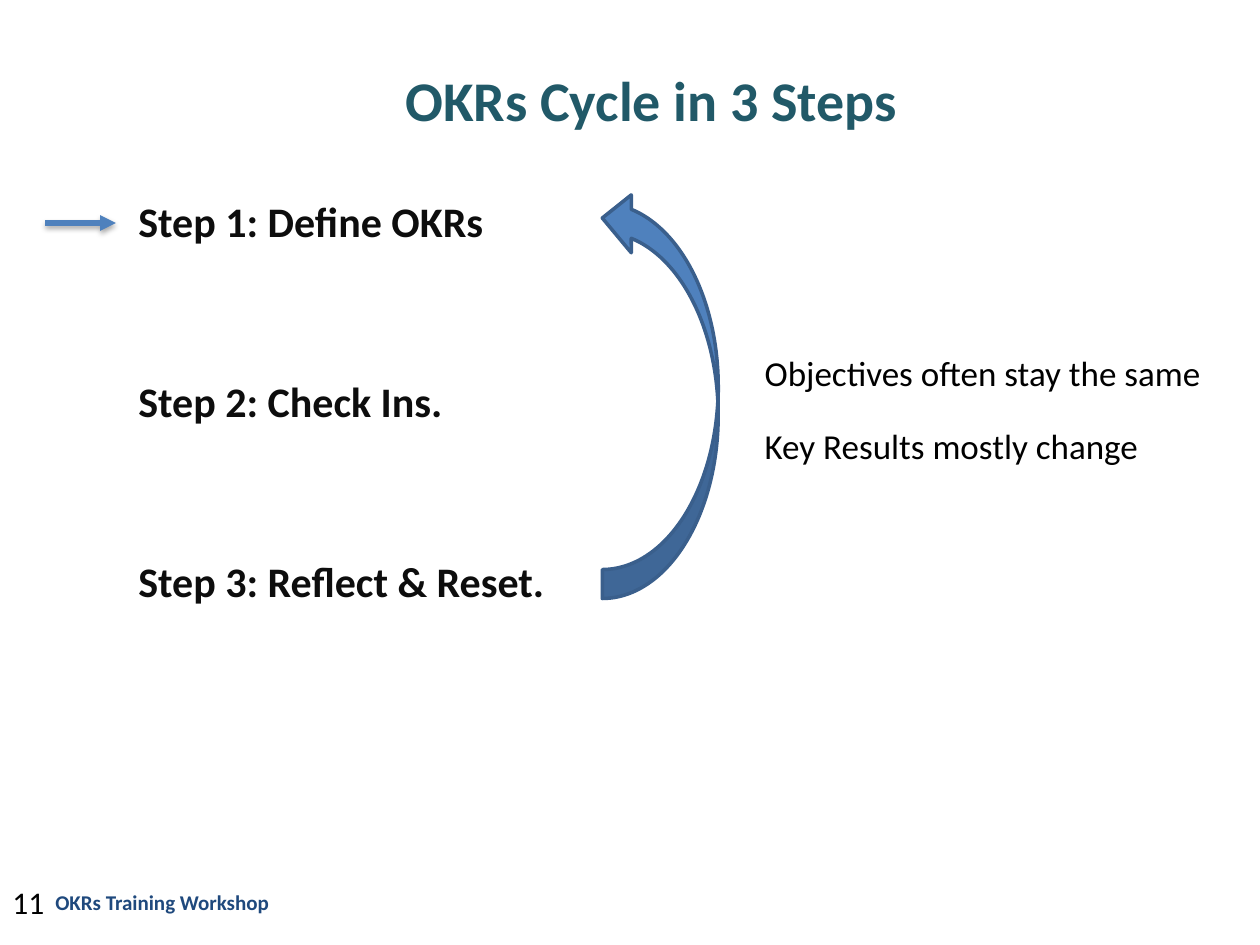
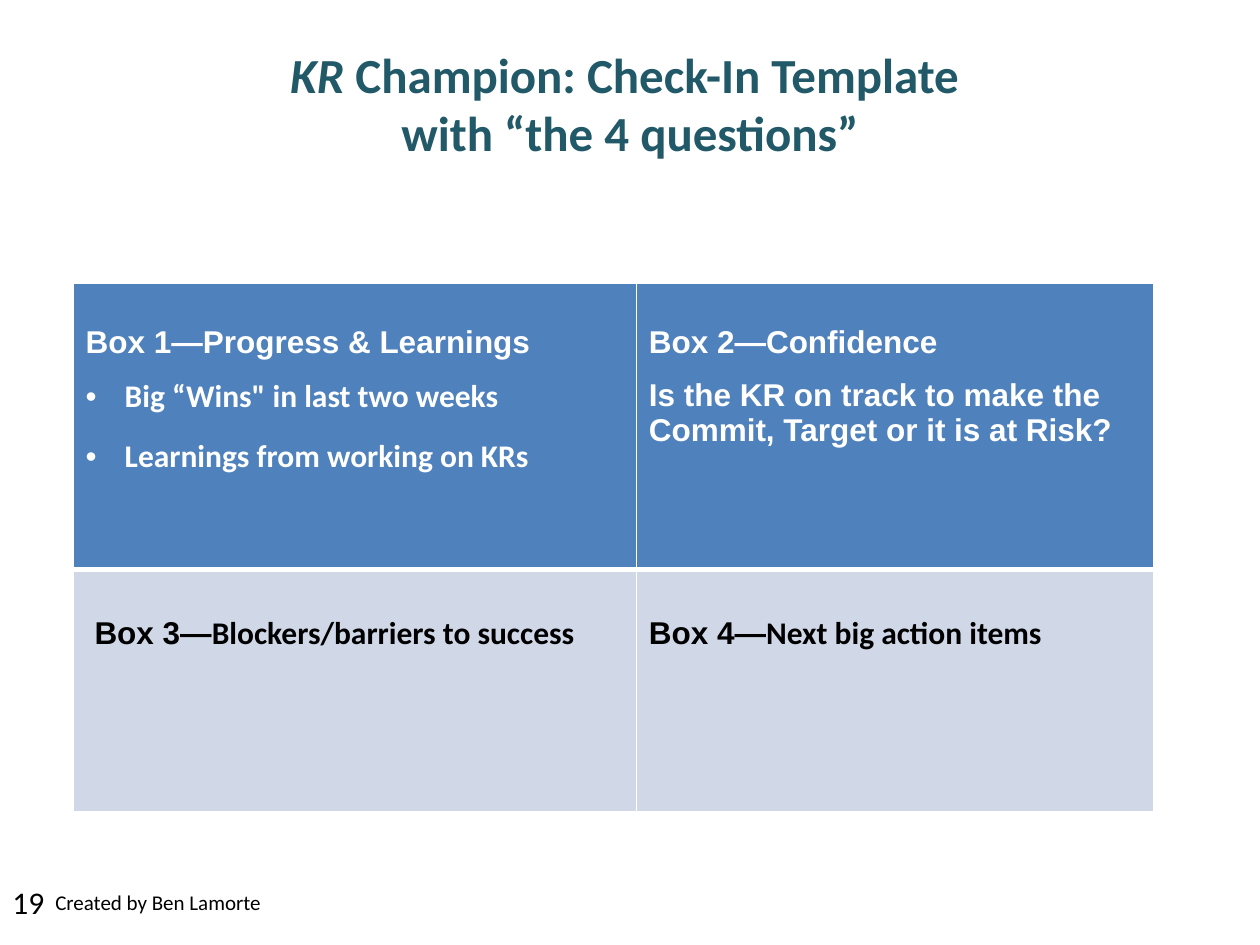
from dataclasses import dataclass

from lxml import etree
from pptx import Presentation
from pptx.dml.color import RGBColor
from pptx.enum.shapes import MSO_CONNECTOR, MSO_SHAPE
from pptx.enum.text import MSO_ANCHOR, PP_ALIGN
from pptx.oxml.ns import qn
from pptx.util import Inches, Pt

STRAIGHT = MSO_CONNECTOR.STRAIGHT
CURVED_ARROW = MSO_SHAPE.CURVED_RIGHT_ARROW
TOP = MSO_ANCHOR.TOP
CENTER = PP_ALIGN.CENTER

TEAL = RGBColor(0x21, 0x59, 0x68)
NAVY = RGBColor(0x1F, 0x49, 0x7D)
BLUE = RGBColor(0x4F, 0x81, 0xBD)
DARK_BLUE = RGBColor(0x3A, 0x5F, 0x8C)
PALE_BLUE = RGBColor(0xD0, 0xD8, 0xE8)
INK = RGBColor(0x0D, 0x0D, 0x0D)
BLACK = RGBColor(0, 0, 0)
WHITE = RGBColor(0xFF, 0xFF, 0xFF)

HEADING_FONT = "Calibri"
TABLE_FONT = "Arial"
COLS, ROWS = 100, 75  # slide grid
UNIT = Inches(0.1)    # side of one grid square


@dataclass
class Box:
    """A rectangle measured in grid columns and rows."""
    x: float
    y: float
    w: float
    h: float

    def inner(self, x, y, w, h):
        return Box(self.x + x, self.y + y, w, h)

    def emu(self):
        return [round(v * UNIT) for v in (self.x, self.y, self.w, self.h)]


PAGE = Box(0, 0, COLS, ROWS)


def add_run(p, text, size, color, bold=False, italic=False, font=HEADING_FONT):
    r = p.add_run()
    r.text = text
    r.font.name, r.font.size = font, Pt(size)
    r.font.bold, r.font.italic = bold, italic
    r.font.color.rgb = color


def next_paragraph(tf, index):
    return tf.add_paragraph() if index else tf.paragraphs[0]


def add_frame(slide, box):
    """Add an empty text box that wraps and fills from the top."""
    tf = slide.shapes.add_textbox(*box.emu()).text_frame
    tf.word_wrap = True
    tf.vertical_anchor = TOP
    return tf


def add_text(slide, box, lines, size, color, bold=False, gap=0):
    """Add a text box with one paragraph per line, gap points apart."""
    tf = add_frame(slide, box)
    for i, line in enumerate(lines):
        p = next_paragraph(tf, i)
        if i < len(lines) - 1:
            p.space_after = Pt(gap)
        add_run(p, line, size, color, bold)


def add_title(slide, box, lines, size):
    """Add a centred title; each line is a list of (text, italic) pairs."""
    p = add_frame(slide, box).paragraphs[0]
    p.alignment = CENTER
    for i, line in enumerate(lines):
        if i:
            p.add_line_break()
        for text, italic in line:
            add_run(p, text, size, TEAL, True, italic)


def add_footer(slide, box, number, text, color, bold=False):
    add_text(slide, box.inner(0, 0, 9.2, 4), [number], 18, BLACK)
    add_text(slide, box.inner(3.4, 0.5, 44.2, 4), [text], 12, color, bold)


def add_pointer(slide, box):
    """Add a softly shadowed arrow along the top of the box."""
    x, y, w, _ = box.emu()
    line = slide.shapes.add_connector(STRAIGHT, x, y, x + w, y)
    line.line.color.rgb = BLUE
    line.line.width = Pt(3)
    spPr = line._element.spPr
    etree.SubElement(spPr.find(qn("a:ln")), qn("a:tailEnd"), type="triangle")
    effects = etree.SubElement(spPr, qn("a:effectLst"))
    shadow = etree.SubElement(effects, qn("a:outerShdw"), blurRad=str(Pt(3.1)),
                              dist=str(Pt(1.8)), dir="5400000", rotWithShape="0")
    shade = etree.SubElement(shadow, qn("a:srgbClr"), val=str(BLACK))
    etree.SubElement(shade, qn("a:alpha"), val="35000")


def add_cycle(slide, box):
    """Place the steps, the arrow back to the first one and its notes."""
    steps = ["Step 1: Define OKRs", "Step 2: Check Ins.", "Step 3: Reflect & Reset."]
    add_pointer(slide, box.inner(3.6, 2.7, 5.6, 0))
    add_text(slide, box.inner(10, 0, 90, 49.5), steps, 24, INK, True, gap=74)

    sp = slide.shapes.add_shape(CURVED_ARROW, *box.inner(47.8, 0, 9.2, 32.5).emu())
    sp.rotation = 180
    sp.shadow.inherit = False
    sp.fill.solid()
    sp.fill.fore_color.rgb = BLUE
    sp.line.color.rgb = DARK_BLUE
    sp.line.width = Pt(2)

    notes = ["Objectives often stay the same", "Key Results mostly change"]
    add_text(slide, box.inner(59.7, 12.4, 40.3, 13.6), notes, 20, BLACK, gap=18)


def set_indent(p, left, first=0, bullet=None):
    pPr = p._p.get_or_add_pPr()
    pPr.set("marL", str(Inches(left)))
    pPr.set("indent", str(Inches(first)))
    if bullet:
        etree.SubElement(pPr, qn("a:buFont"), typeface="Arial")
        etree.SubElement(pPr, qn("a:buChar"), char=bullet)


def set_borders(cell, **widths):
    """Draw white borders; widths are points for the sides L, R, T and B."""
    tcPr = cell._tc.get_or_add_tcPr()
    for i, side in enumerate("LRTB"):
        ln = etree.Element(qn(f"a:ln{side}"), w=str(Pt(widths.get(side, 1))))
        fill = etree.SubElement(ln, qn("a:solidFill"))
        etree.SubElement(fill, qn("a:srgbClr"), val=str(WHITE))
        tcPr.insert(i, ln)


def fill_cell(cell, color, heading, text="", bullets=(), indent=0):
    """Write a heading of two fonts, or a heading over text or bullets."""
    tf = cell.text_frame
    label, rest, rest_font = heading
    p = tf.paragraphs[0]
    set_indent(p, indent)
    p.line_spacing, p.space_after = 2.0, Pt(10)
    add_run(p, label, 18, color, True, font=TABLE_FONT)
    add_run(p, rest, 18, color, True, font=rest_font)
    if text:
        p = tf.add_paragraph()
        p.space_after = Pt(10)
        add_run(p, text, 18, color, True, font=TABLE_FONT)
    for i, bullet in enumerate(bullets):
        p = tf.add_paragraph()
        if i < len(bullets) - 1:
            p.space_after = Pt(12)
        set_indent(p, 0.31, -0.31, "•")
        add_run(p, bullet, 18, color, True)


def add_question_table(slide, box):
    table = slide.shapes.add_table(2, 2, *box.emu()).table
    for column, width in zip(table.columns, (44.7, 41.1)):
        column.width = round(width * UNIT)
    for row, height in zip(table.rows, (22.7, 19.2)):
        row.height = round(height * UNIT)
    for c in range(2):
        for r, (fill, thick) in enumerate([(BLUE, "B"), (PALE_BLUE, "T")]):
            cell = table.cell(r, c)
            cell.fill.solid()
            cell.fill.fore_color.rgb = fill
            set_borders(cell, **{thick: 3})

    fill_cell(table.cell(0, 0), WHITE,
              ("Box 1—", "Progress & Learnings", TABLE_FONT),
              bullets=["Big “Wins\" in last two weeks", "Learnings from working on KRs"])
    fill_cell(table.cell(0, 1), WHITE, ("Box 2—", "Confidence", TABLE_FONT),
              text="Is the KR on track to make the Commit, Target or it is at Risk?")
    fill_cell(table.cell(1, 0), BLACK,
              ("Box 3—", "Blockers/barriers to success", HEADING_FONT), indent=0.07)
    fill_cell(table.cell(1, 1), BLACK,
              ("Box 4—", "Next big action items", HEADING_FONT))


def cycle_slide(slide, page, footer):
    title = [[("OKRs Cycle in 3 Steps", False)]]
    add_title(slide, page.inner(6.7, 4.7, 90, 12.5), title, 32)
    add_cycle(slide, page.inner(0, 15, COLS, 49.5))
    add_footer(slide, footer, "11", "OKRs Training Workshop", NAVY, True)


def check_in_slide(slide, page, footer):
    title = [[("KR ", True), ("Champion: Check-In Template ", False)],
             [("with “the 4 questions”", False)]]
    add_title(slide, page.inner(5, 3, 90, 12.5), title, 28)
    add_question_table(slide, page.inner(5.8, 22.5, 85.8, 41.9))
    add_footer(slide, footer, "19", "Created by Ben Lamorte", BLACK)


def main():
    prs = Presentation()
    prs.slide_width, prs.slide_height = COLS * UNIT, ROWS * UNIT
    blank = prs.slide_layouts[6]
    footer = PAGE.inner(0, 69.6, COLS, 5.4)
    for build in (cycle_slide, check_in_slide):
        build(prs.slides.add_slide(blank), PAGE, footer)
    prs.save("out.pptx")


if __name__ == "__main__":
    main()
